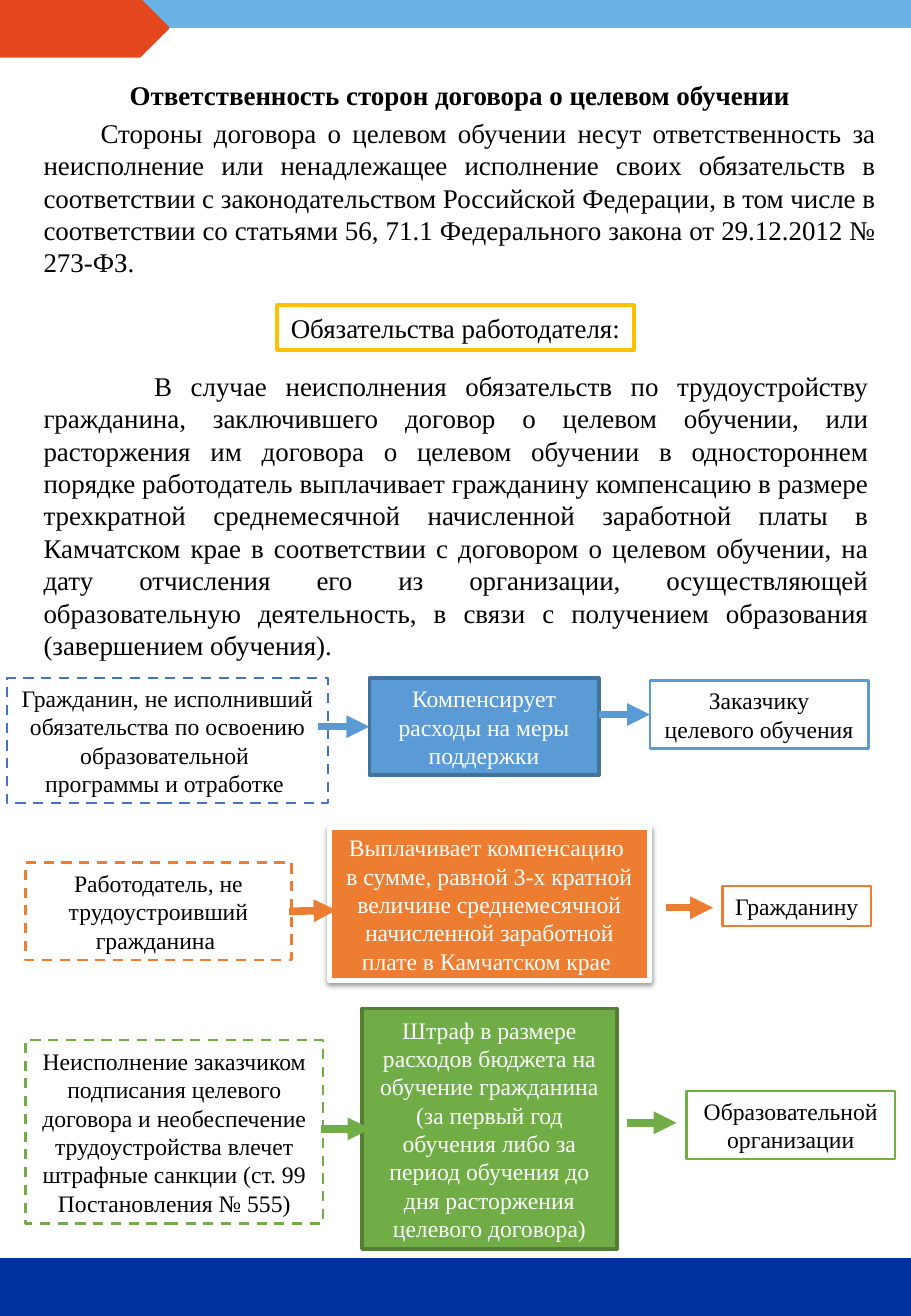
from lxml import etree
from pptx import Presentation
from pptx.dml.color import RGBColor
from pptx.enum.dml import MSO_LINE
from pptx.enum.shapes import MSO_CONNECTOR, MSO_SHAPE
from pptx.enum.text import MSO_ANCHOR, MSO_AUTO_SIZE, PP_ALIGN
from pptx.oxml import parse_xml
from pptx.oxml.ns import nsdecls, qn
from pptx.util import Inches, Pt

FONT = "Times New Roman"
BLACK = RGBColor(0x00, 0x00, 0x00)
WHITE = RGBColor(0xFF, 0xFF, 0xFF)
SKY = RGBColor(0x69, 0xB3, 0xE7)
NAVY = RGBColor(0x00, 0x33, 0xA0)
RED = RGBColor(0xE4, 0x47, 0x1E)
GOLD = RGBColor(0xFF, 0xC0, 0x00)
INDIGO = RGBColor(0x44, 0x72, 0xC4)
BLUE = RGBColor(0x5B, 0x9B, 0xD5)
DARK_BLUE = RGBColor(0x43, 0x72, 0x9D)
ORANGE = RGBColor(0xED, 0x7D, 0x31)
GREEN = RGBColor(0x70, 0xAD, 0x47)
DARK_GREEN = RGBColor(0x52, 0x7F, 0x34)


class Page:
    def __init__(self, slide):
        self.shapes = slide.shapes

    def shape(self, at, fill, line, width=2, kind=MSO_SHAPE.RECTANGLE):
        s = self.shapes.add_shape(kind, *map(Inches, at))
        s.shadow.inherit = False
        s.fill.solid()
        s.fill.fore_color.rgb = fill
        s.line.color.rgb = line
        s.line.width = Pt(width)
        return s

    def paragraph(self, p, text, size, color=BLACK, bold=False, align=PP_ALIGN.CENTER):
        p.text = text
        p.alignment = align
        for r in p.runs:
            r.font.name = FONT
            r.font.size = Pt(size)
            r.font.bold = bold
            r.font.color.rgb = color

    def box(self, at, text, line, fill=WHITE, color=BLACK, size=14, width=1.5,
            dashed=False, wrap=True):
        s = self.shape(at, fill, line, width)
        if dashed:
            s.line.dash_style = MSO_LINE.DASH
        tf = s.text_frame
        tf.text = text
        tf.word_wrap = wrap
        tf.auto_size = MSO_AUTO_SIZE.SHAPE_TO_FIT_TEXT
        tf.vertical_anchor = MSO_ANCHOR.MIDDLE
        for p in tf.paragraphs:
            self.paragraph(p, p.text, size, color)
        return s

    def body(self, at, text, indent, title=None):
        tf = self.shapes.add_textbox(*map(Inches, at)).text_frame
        tf.word_wrap = True
        tf.auto_size = MSO_AUTO_SIZE.SHAPE_TO_FIT_TEXT
        p = tf.paragraphs[0]
        if title:
            self.paragraph(p, title, 16, bold=True)
            p.space_after = Pt(3)
            p = tf.add_paragraph()
        self.paragraph(p, text, 16, align=PP_ALIGN.JUSTIFY)
        p._p.get_or_add_pPr().set("indent", str(Inches(indent)))

    def arrow(self, x1, y1, x2, y2, color, target=None):
        c = self.shapes.add_connector(MSO_CONNECTOR.STRAIGHT, *map(Inches, (x1, y1, x2, y2)))
        if target is not None:
            c.end_connect(target, 1)
        c.line.color.rgb = color
        c.line.width = Pt(4.5)
        etree.SubElement(c.line._get_or_add_ln(), qn("a:tailEnd"), type="triangle")
        etree.SubElement(c._element.spPr, qn("a:effectLst"))

    def drop_shadow(self, s):
        effects = s._element.spPr.find(qn("a:effectLst"))
        effects.append(parse_xml(
            f'<a:outerShdw {nsdecls("a")} blurRad="{Pt(3.1)}" dist="{Pt(1.6)}" '
            'dir="5400000" rotWithShape="0"><a:srgbClr val="000000">'
            '<a:alpha val="38000"/></a:srgbClr></a:outerShdw>'))


def main():
    prs = Presentation()
    prs.slide_width, prs.slide_height = Inches(7.5), Inches(10.83)
    page = Page(prs.slides.add_slide(prs.slide_layouts[6]))

    # Header and footer bands
    page.shape((0, -0.01, 7.5, 0.23), SKY, SKY)
    page.shape((0, 10.37, 7.5, 0.47), NAVY, NAVY)
    page.shape((0, 0, 1.38, 0.46), RED, RED, kind=MSO_SHAPE.PENTAGON)

    # Citizen: compensates the customer
    page.box((0.06, 5.58, 2.64, 1.03),
             "Гражданин, не исполнивший обязательства по освоению образовательной \n"
             "программы и отработке ", INDIGO, dashed=True)
    refund = page.box((3.04, 5.58, 1.89, 0.8), "Компенсирует расходы на меры поддержки",
                      DARK_BLUE, BLUE, WHITE, width=2)
    customer = page.box((5.35, 5.6, 1.8, 0.56), "Заказчику целевого обучения", BLUE)

    # Employer: pays the citizen
    page.box((0.21, 7.1, 2.19, 0.8), "Работодатель, не трудоустроивший гражданина ",
             ORANGE, dashed=True)
    payment = page.box((2.71, 6.81, 2.64, 1.26),
                       "Выплачивает компенсацию \n"
                       "в сумме, равной 3-х кратной величине среднемесячной начисленной "
                       "заработной плате в Камчатском крае ", WHITE, ORANGE, WHITE, width=3)
    page.drop_shadow(payment)
    page.box((5.95, 7.29, 1.22, 0.33), "Гражданину", ORANGE, wrap=False)

    # Customer: pays a fine to the school
    page.box((0.21, 8.56, 2.45, 1.51),
             "Неисполнение заказчиком подписания целевого договора и необеспечение "
             "трудоустройства влечет штрафные санкции (ст. 99 Постановления № 555)",
             GREEN, dashed=True)
    page.box((2.98, 8.3, 2.1, 1.98),
             "Штраф в размере расходов бюджета на обучение гражданина (за первый год "
             "обучения либо за период обучения до дня расторжения целевого договора)",
             DARK_GREEN, GREEN, WHITE, width=2)
    page.box((5.65, 8.98, 1.72, 0.56), "Образовательной организации", GREEN)

    # Arrows
    page.arrow(2.62, 5.98, 3.04, 5.98, BLUE, refund)
    page.arrow(4.93, 5.88, 5.35, 5.88, BLUE, customer)
    page.arrow(2.38, 7.5, 2.77, 7.49, ORANGE)
    page.arrow(5.48, 7.47, 5.87, 7.47, ORANGE)
    page.arrow(2.64, 9.29, 3.05, 9.29, GREEN)
    page.arrow(5.16, 9.24, 5.57, 9.24, GREEN)

    # Text
    page.box((2.28, 2.51, 2.94, 0.37), "Обязательства работодателя:", GOLD,
             size=16, width=2, wrap=False)
    page.body((0.26, 0.6, 7.05, 1.76),
              "Стороны договора о целевом обучении несут ответственность за неисполнение "
              "или ненадлежащее исполнение своих обязательств в соответствии с "
              "законодательством Российской Федерации, в том числе в соответствии со "
              "статьями 56, 71.1 Федерального закона от 29.12.2012 № 273-ФЗ.", 0.47,
              title="Ответственность сторон договора о целевом обучении")
    page.body((0.26, 2.99, 6.99, 2.52),
              "В случае неисполнения обязательств по трудоустройству гражданина, "
              "заключившего договор о целевом обучении, или расторжения им договора о "
              "целевом обучении в одностороннем порядке работодатель выплачивает "
              "гражданину компенсацию в размере трехкратной среднемесячной начисленной "
              "заработной платы в Камчатском крае в соответствии с договором о целевом "
              "обучении, на дату отчисления его из организации, осуществляющей "
              "образовательную деятельность, в связи с получением образования "
              "(завершением обучения).", 0.91)

    prs.save("out.pptx")


if __name__ == "__main__":
    main()
